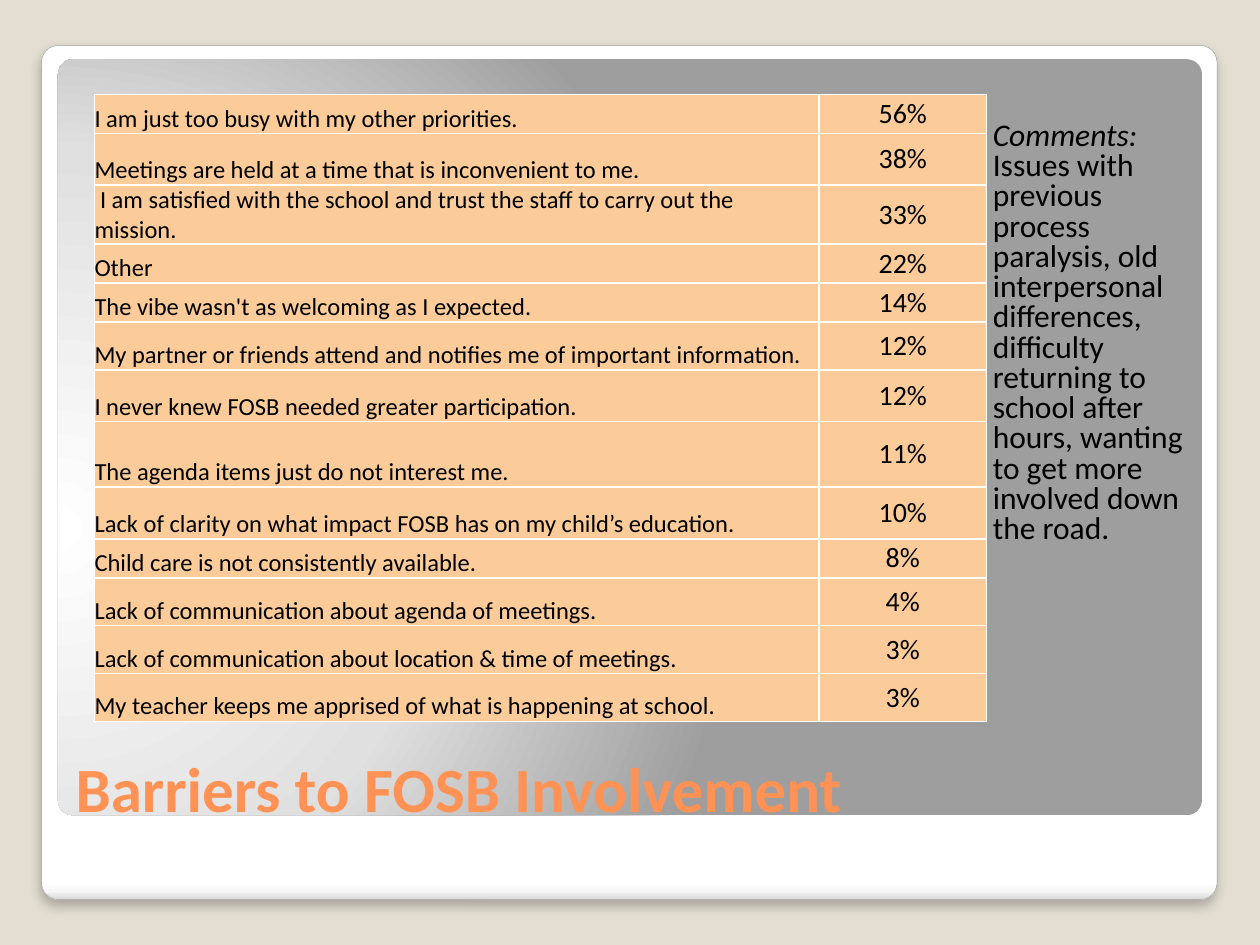
from lxml.etree import SubElement
from pptx import Presentation
from pptx.dml.color import RGBColor
from pptx.enum.shapes import MSO_SHAPE as Shape
from pptx.enum.text import MSO_ANCHOR as Anchor, PP_ALIGN as Align
from pptx.oxml.ns import qn
from pptx.util import Inches, Pt

FONT = "Calibri"
BLACK = "000000"
WHITE = "FFFFFF"
PEACH = "FBCC9A"

BARRIERS = [
    ("I am just too busy with my other priorities.", "56%", 0.31),
    ("Meetings are held at a time that is inconvenient to me.", "38%", 0.41),
    (" I am satisfied with the school and trust the staff to carry out the mission.", "33%", 0.38),
    ("Other", "22%", 0.31),
    ("The vibe wasn't as welcoming as I expected.", "14%", 0.31),
    ("My partner or friends attend and notifies me of important information.", "12%", 0.38),
    ("I never knew FOSB needed greater participation.", "12%", 0.41),
    ("The agenda items just do not interest me.", "11%", 0.52),
    ("Lack of clarity on what impact FOSB has on my child’s education.", "10%", 0.41),
    ("Child care is not consistently available.", "8%", 0.31),
    ("Lack of communication about agenda of meetings.", "4%", 0.38),
    ("Lack of communication about location & time of meetings.", "3%", 0.38),
    ("My teacher keeps me apprised of what is happening at school.", "3%", 0.38),
]
COMMENTS = (
    "Issues with previous process paralysis, old interpersonal differences, "
    "difficulty returning to school after hours, wanting to get more involved "
    "down the road."
)


def color(value):
    return RGBColor.from_string(value)


def add_xml(parent, tag, **attributes):
    return SubElement(parent, qn(tag), {name: str(value) for name, value in attributes.items()})


def add_run(paragraph, text, size, fill=BLACK, bold=False, italic=False):
    run = paragraph.add_run()
    run.text = text
    font = run.font
    font.name, font.size, font.bold, font.italic = FONT, Pt(size), bold, italic
    font.color.rgb = color(fill)


def set_margins(frame, inset):
    frame.margin_left = frame.margin_right = Inches(inset)
    frame.margin_top = frame.margin_bottom = Inches(inset)


def place(shape, left, top, width, height):
    shape.left, shape.top = Inches(left), Inches(top)
    shape.width, shape.height = Inches(width), Inches(height)


def add_panel(slide, left, top, width, height, stops):
    panel = slide.shapes.add_shape(
        Shape.ROUNDED_RECTANGLE, Inches(left), Inches(top), Inches(width), Inches(height)
    )
    panel.adjustments[0] = 0.02
    panel.line.fill.background()
    panel.shadow.inherit = False
    panel.fill.gradient()
    gradient = panel._element.spPr.find(qn("a:gradFill"))
    for child in list(gradient):
        gradient.remove(child)
    stop_list = add_xml(gradient, "a:gsLst")
    for position, value in stops:
        stop = add_xml(stop_list, "a:gs", pos=position * 1000)
        add_xml(stop, "a:srgbClr", val=value)
    return panel, gradient


def add_card(slide):
    stops = [(0, WHITE), (98, WHITE), (99, "F7F7F7"), (100, "D9D9D9")]
    card, gradient = add_panel(slide, 0.33, 0.36, 9.33, 6.78, stops)
    add_xml(gradient, "a:lin", ang=90 * 60000, scaled=0)
    card.line.color.rgb = color("A2A1A1")
    card.line.width = Pt(0.25)
    effects = card._element.spPr.find(qn("a:effectLst"))
    shadow = add_xml(
        effects, "a:outerShdw", blurRad=Pt(6), dist=Pt(4), dir=90 * 60000, rotWithShape=0
    )
    shade = add_xml(shadow, "a:srgbClr", val=BLACK)
    add_xml(shade, "a:alpha", val=25000)


def add_backdrop(slide):
    stops = [(0, WHITE), (55, "E0E0E0"), (100, "9E9E9E")]
    _, gradient = add_panel(slide, 0.46, 0.47, 9.08, 6, stops)
    circle = add_xml(gradient, "a:path", path="circle")
    add_xml(circle, "a:fillToRect", l=-20000, t=62000, r=120000, b=38000)


def add_title(slide, text):
    title = slide.shapes.title
    place(title, 0.55, 5.83, 8.95, 0.77)
    slide.shapes._spTree.append(title._element)
    frame = title.text_frame
    set_margins(frame, 0.05)
    frame.vertical_anchor = Anchor.BOTTOM
    paragraph = frame.paragraphs[0]
    paragraph.alignment = Align.LEFT
    add_run(paragraph, text, 36, "FF9254", bold=True)


def add_comments(slide):
    box = slide.shapes.add_textbox(Inches(7.83), Inches(0.92), Inches(1.7), Inches(4.42))
    frame = box.text_frame
    frame.word_wrap = True
    set_margins(frame, 0.05)
    paragraph = frame.paragraphs[0]
    paragraph.line_spacing = 0.8
    paragraph.space_before = Pt(2)
    add_run(paragraph, "Comments: ", 18, italic=True)
    add_run(paragraph, COMMENTS, 18)


def fill_cell(cell, text, size, alignment, anchor):
    properties = cell._tc.get_or_add_tcPr()
    for side in ("a:lnL", "a:lnR", "a:lnT", "a:lnB"):
        border = add_xml(properties, side, w=Pt(1))
        add_xml(add_xml(border, "a:solidFill"), "a:srgbClr", val=WHITE)
    cell.fill.solid()
    cell.fill.fore_color.rgb = color(PEACH)
    set_margins(cell, 0)
    cell.vertical_anchor = anchor
    paragraph = cell.text_frame.paragraphs[0]
    paragraph.alignment = alignment
    add_run(paragraph, text, size)


def add_barrier_table(slide):
    table = slide.shapes.add_table(
        len(BARRIERS), 2, Inches(0.75), Inches(0.75), Inches(7.08), Inches(4.92)
    ).table
    table.first_row = table.horz_banding = False
    for column, width in zip(table.columns, (5.75, 1.33)):
        column.width = Inches(width)
    for row, (barrier, share, height) in zip(table.rows, BARRIERS):
        row.height = Inches(height)
        fill_cell(row.cells[0], barrier, 14, Align.LEFT, Anchor.BOTTOM)
        fill_cell(row.cells[1], share, 16, Align.CENTER, Anchor.MIDDLE)


def main():
    presentation = Presentation()
    presentation.slide_width, presentation.slide_height = Inches(10), Inches(7.5)
    slide = presentation.slides.add_slide(presentation.slide_layouts[5])
    slide.background.fill.solid()
    slide.background.fill.fore_color.rgb = color("E3DED1")
    add_card(slide)
    add_backdrop(slide)
    add_title(slide, "Barriers to FOSB Involvement")
    add_comments(slide)
    add_barrier_table(slide)
    presentation.save("out.pptx")


if __name__ == "__main__":
    main()
